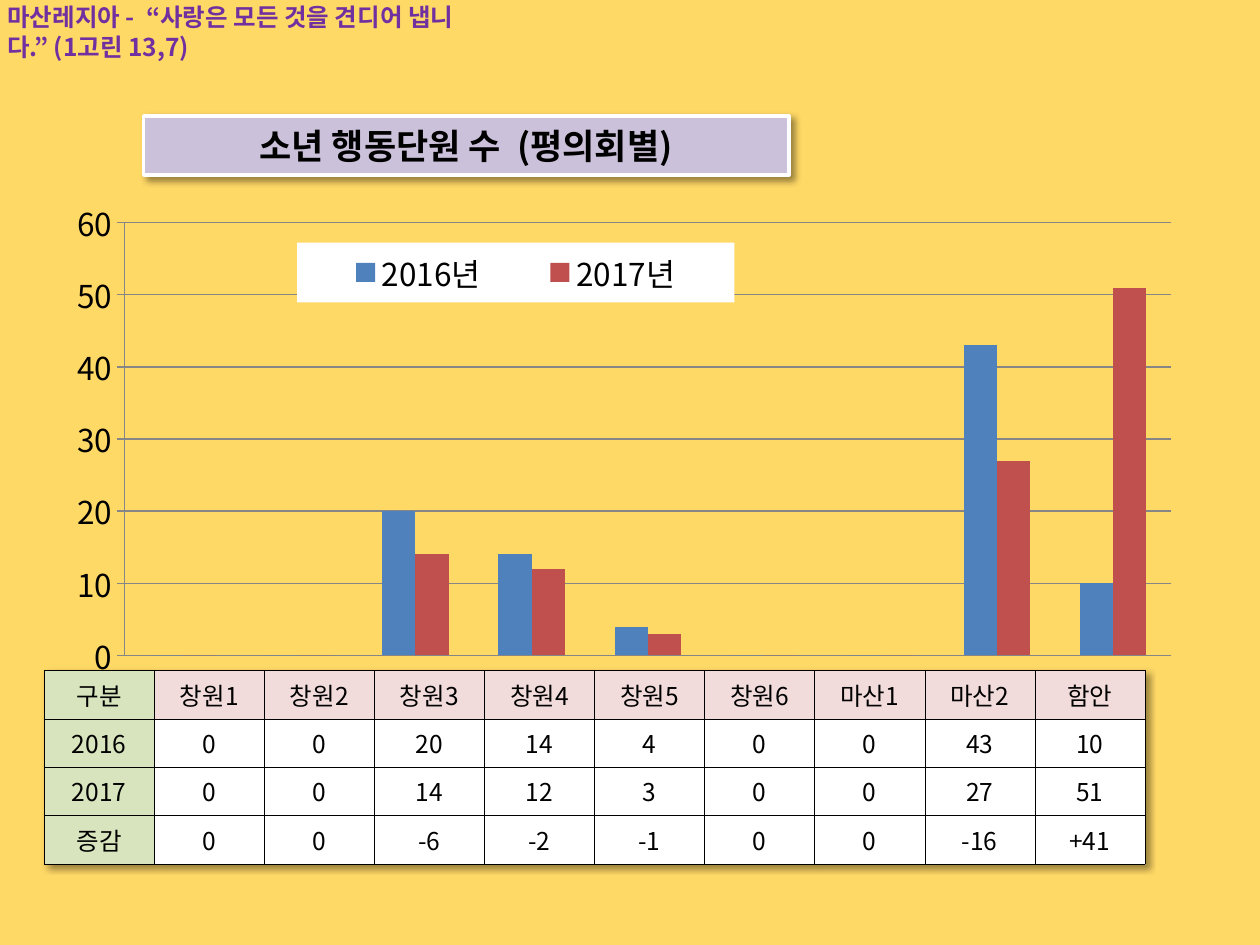
"""Builds a slide charting junior active members by council."""
from lxml import etree
from pptx import Presentation
from pptx import util as u
from pptx.chart.data import CategoryChartData
from pptx.dml.color import RGBColor
from pptx.enum import chart as charts, text
from pptx.oxml import parse_xml
from pptx.oxml.ns import nsdecls, qn

FONT = "Noto Sans CJK KR"
COLORS = {
    "background": "FFD966", "pill": "CCC1DA", "white": "FFFFFF", "black": "000000",
    "purple": "7030A0", "grid": "868686", "label": "D7E4BD", "header": "F2DCDB",
    "2016": "4F81BD", "2017": "C0504D",
}
COUNCILS = ["창원1", "창원2", "창원3", "창원4", "창원5", "창원6", "마산1", "마산2", "함안"]
MEMBERS = {"2016": [0, 0, 20, 14, 4, 0, 0, 43, 10], "2017": [0, 0, 14, 12, 3, 0, 0, 27, 51]}


def color(name):
    return RGBColor.from_string(COLORS[name])


def fill(target, name):
    target.fill.solid()
    target.fill.fore_color.rgb = color(name)


def shadow_xml():
    return parse_xml(
        f'<a:effectLst {nsdecls("a")}><a:outerShdw blurRad="{u.Pt(4)}" dist="{u.Pt(3)}" '
        f'dir="2700000" algn="tl" rotWithShape="0"><a:srgbClr val="{COLORS["black"]}">'
        '<a:alpha val="40000"/></a:srgbClr></a:outerShdw></a:effectLst>')


def layout_xml(left, top, width, height, inner=False):
    target = '<c:layoutTarget val="inner"/>' if inner else ""
    sizes = zip("xywh", (left, top, width, height))
    modes = '<c:xMode val="edge"/><c:yMode val="edge"/>'
    values = "".join(f'<c:{name} val="{size}"/>' for name, size in sizes)
    return parse_xml(f'<c:layout {nsdecls("c")}><c:manualLayout>{target}{modes}{values}'
                     '</c:manualLayout></c:layout>')


def use_east_asian_font(element):
    for latin in list(element.iter(qn("a:latin"))):
        east_asian = etree.Element(qn("a:ea"), typeface=FONT)
        latin.addnext(east_asian)


class SlideBuilder:
    """Holds the style and the current slide."""

    def __init__(self, deck):
        self.page = deck.slides.add_slide(deck.slide_layouts[5])
        fill(self.page.background, "background")

    def paragraph(self, frame, words, size, name="black", bold=False,
                  align=text.PP_ALIGN.CENTER):
        para = frame.paragraphs[0]
        para.text = words
        para.alignment = align
        para.font.name = FONT
        para.font.size = u.Pt(size)
        para.font.bold = bold
        para.font.color.rgb = color(name)
        use_east_asian_font(para._p)

    def title(self, words, left, top, width, height):
        box = self.page.shapes.title
        box.left, box.top, box.width, box.height = map(u.Inches, (left, top, width, height))
        properties = box._element.spPr
        properties.append(parse_xml(
            f'<a:prstGeom {nsdecls("a")} prst="roundRect"><a:avLst>'
            '<a:gd name="adj" fmla="val 50000"/></a:avLst></a:prstGeom>'))
        fill(box, "pill")
        box.line.color.rgb = color("white")
        box.line.width = u.Pt(2)
        properties.append(shadow_xml())
        frame = box.text_frame
        frame.auto_size = text.MSO_AUTO_SIZE.NONE
        frame.vertical_anchor = text.MSO_ANCHOR.MIDDLE
        self.paragraph(frame, words, 20, bold=True)

    def caption(self, words, left, top, width, height):
        box = self.page.shapes.add_textbox(*map(u.Inches, (left, top, width, height)))
        box.text_frame.word_wrap = True
        box.text_frame.auto_size = text.MSO_AUTO_SIZE.SHAPE_TO_FIT_TEXT
        self.paragraph(box.text_frame, words, 14, "purple", True, text.PP_ALIGN.LEFT)

    def column_chart(self, members, left, top, width, height):
        data = CategoryChartData()
        data.categories = [str(n + 1) for n in range(len(COUNCILS))]
        for year, values in members.items():
            data.add_series(f"{year}년", values)
        chart = self.page.shapes.add_chart(
            charts.XL_CHART_TYPE.COLUMN_CLUSTERED,
            *map(u.Inches, (left, top, width, height)), data).chart
        chart.has_title = False
        chart.font.name = FONT
        chart.font.size = u.Pt(18)
        chart.font.color.rgb = color("black")
        plot = chart.plots[0]
        plot.gap_width, plot.overlap, plot.vary_by_categories = 150, 0, False
        for year, series in zip(members, plot.series):
            fill(series.format, year)
        chart.category_axis.visible = False
        axis = chart.value_axis
        axis.minimum_scale, axis.maximum_scale, axis.major_unit = 0, 60, 10
        axis.major_tick_mark = charts.XL_TICK_MARK.OUTSIDE
        for line in (axis.format.line, axis.major_gridlines.format.line):
            line.color.rgb = color("grid")
            line.width = u.Pt(0.75)
        area = chart._chartSpace.chart.plotArea
        for layout in area.findall(qn("c:layout")):
            area.remove(layout)
        area.insert(0, layout_xml(0.07, 0.06, 0.91, 0.87, inner=True))
        self.legend(chart)
        use_east_asian_font(chart._chartSpace)

    def legend(self, chart):
        chart.has_legend = True
        chart.legend.position = charts.XL_LEGEND_POSITION.RIGHT
        chart.legend.include_in_layout = False
        element = chart.legend._element
        for layout in element.findall(qn("c:layout")):
            element.remove(layout)
        element.find(qn("c:legendPos")).addnext(layout_xml(0.22, 0.1, 0.38, 0.12))
        element.find(qn("c:overlay")).addnext(parse_xml(
            f'<c:spPr {nsdecls("c", "a")}><a:solidFill><a:srgbClr val="{COLORS["white"]}"/>'
            '</a:solidFill></c:spPr>'))

    def table(self, rows, left, top, width, height):
        grid = self.page.shapes.add_table(
            len(rows), len(rows[0]), *map(u.Inches, (left, top, width, height))).table
        grid.first_row = grid.horz_banding = False
        grid._tbl.tblPr.insert(0, shadow_xml())
        for r, row in enumerate(rows):
            for c, words in enumerate(row):
                cell = grid.cell(r, c)
                self.paragraph(cell.text_frame, words, 14)
                cell.vertical_anchor = text.MSO_ANCHOR.MIDDLE
                self.borders(cell)
                fill(cell, "label" if c == 0 else "header" if r == 0 else "white")

    def borders(self, cell):
        for side in "LRTB":
            cell._tc.get_or_add_tcPr().append(parse_xml(
                f'<a:ln{side} {nsdecls("a")} w="{u.Pt(0.25)}"><a:solidFill>'
                f'<a:srgbClr val="{COLORS["black"]}"/></a:solidFill></a:ln{side}>'))


def main():
    deck = Presentation()
    deck.slide_width, deck.slide_height = u.Inches(10), u.Inches(7.5)
    builder = SlideBuilder(deck)
    builder.title("소년 행동단원 수  (평의회별)", 1.14, 0.92, 5.12, 0.47)
    builder.column_chart(MEMBERS, 0.35, 1.53, 9.13, 3.95)
    changes = [after - before for before, after in zip(*MEMBERS.values())]
    rows = [["구분", *COUNCILS]]
    rows += [[year, *map(str, values)] for year, values in MEMBERS.items()]
    rows.append(["증감", *(f"{n:+d}" if n else "0" for n in changes)])
    builder.table(rows, 0.35, 5.32, 8.74, 1.5)
    builder.caption("마산레지아 -  “사랑은 모든 것을 견디어 냅니다.” (1고린 13,7)",
                    -0.04, -0.03, 3.93, 0.34)
    deck.save("out.pptx")


if __name__ == "__main__":
    main()
